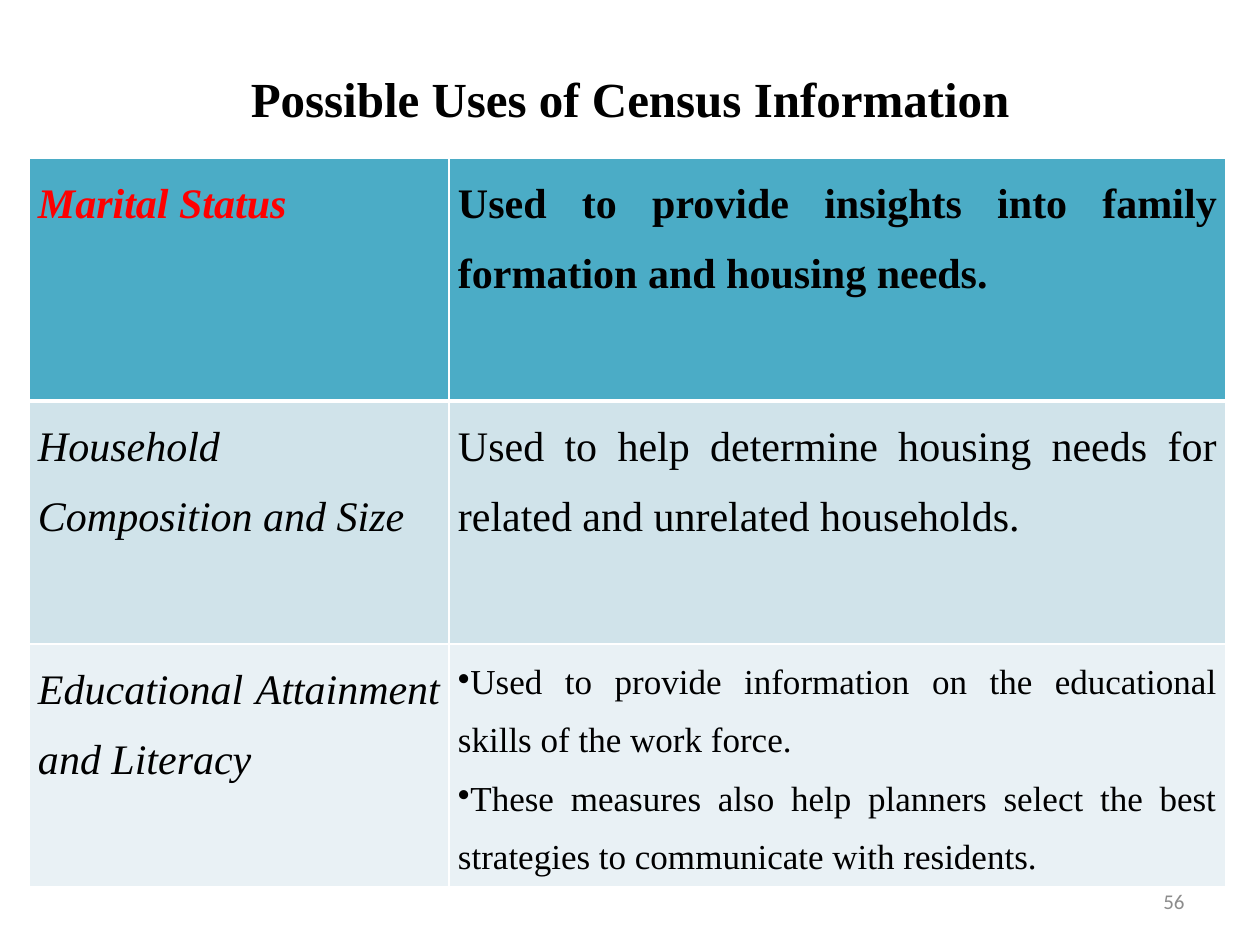
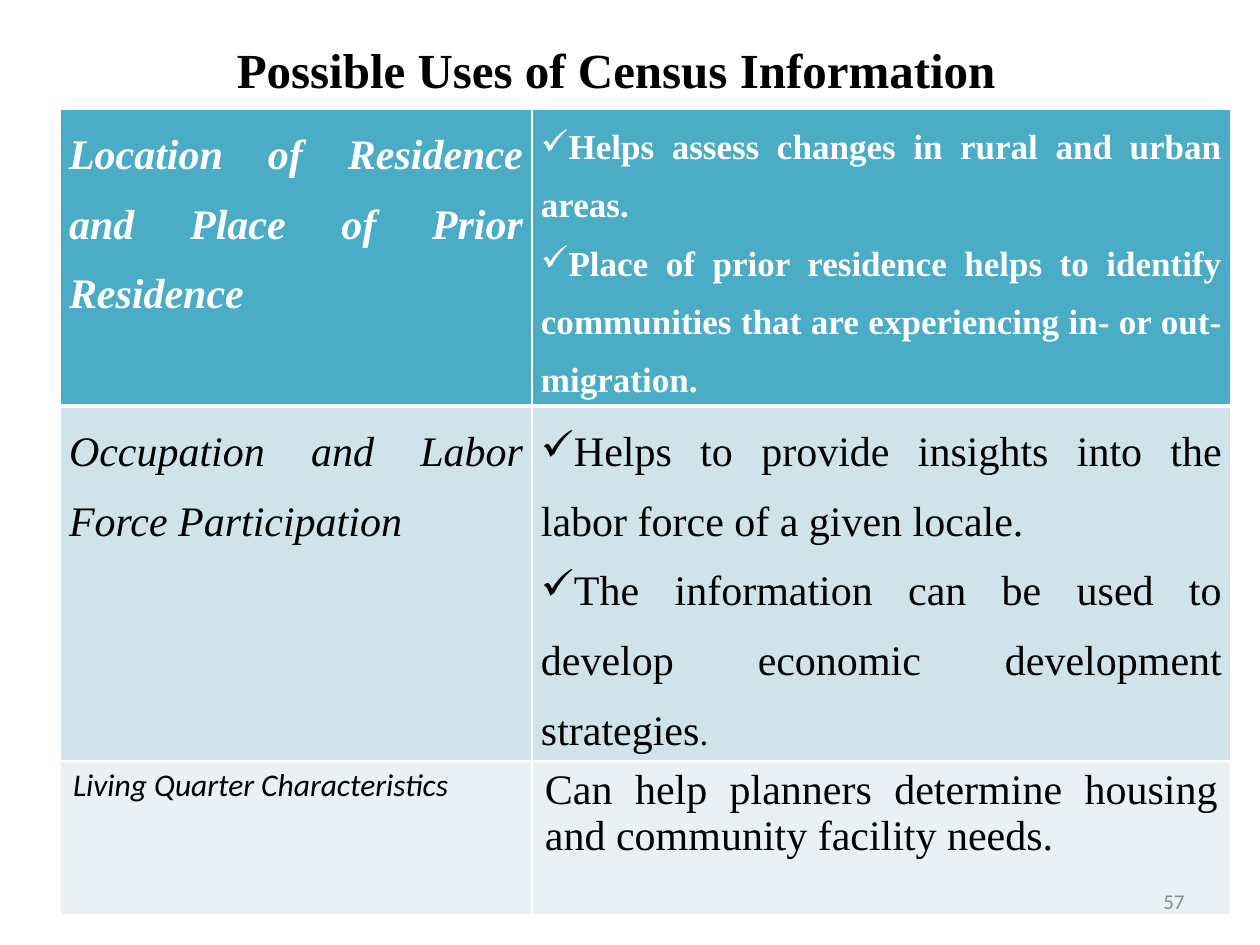
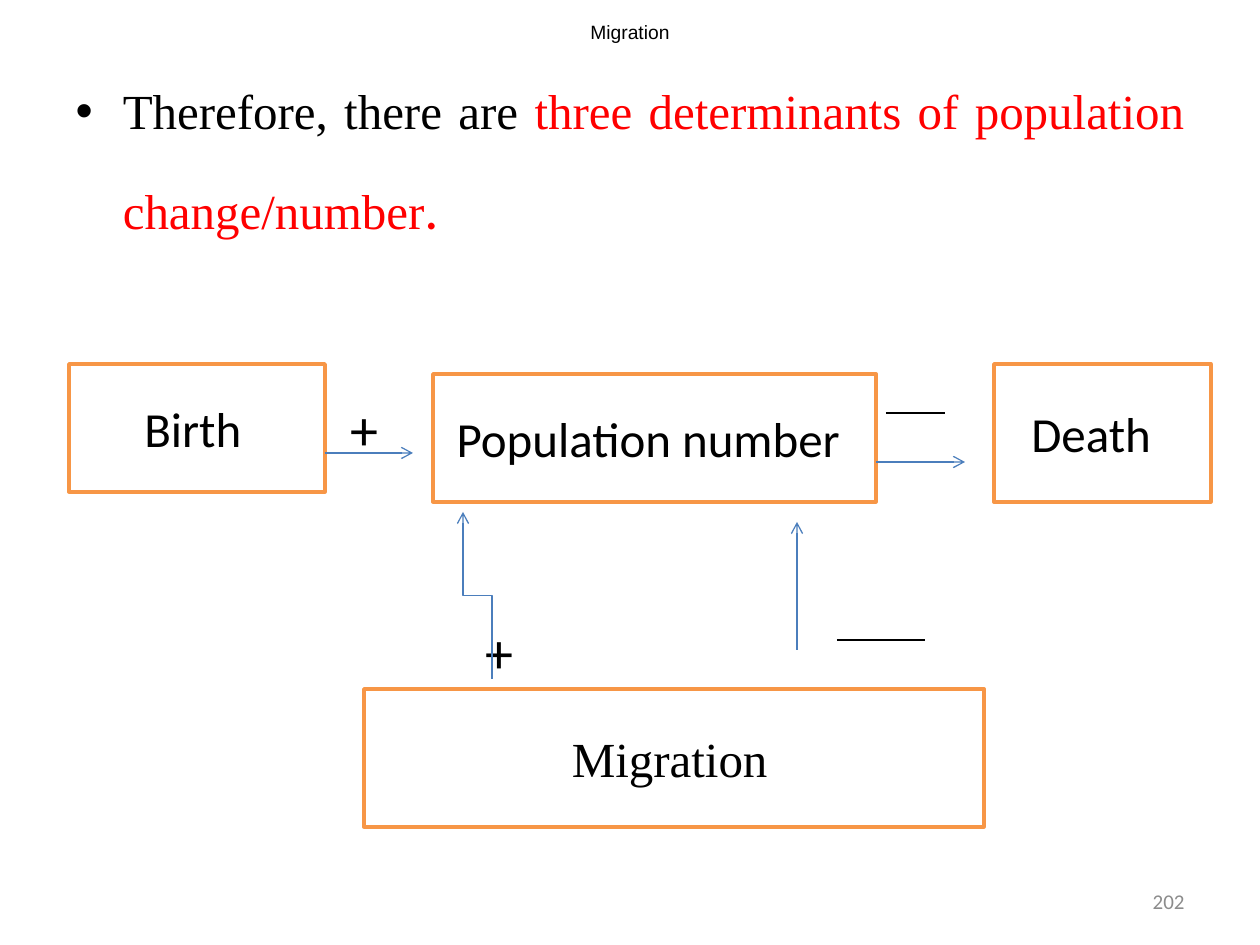
"""Build three slides on census information and the determinants of population change."""
from lxml.etree import SubElement
from pptx import Presentation
from pptx.dml.color import RGBColor
from pptx.enum.shapes import MSO_CONNECTOR as LINK, MSO_SHAPE as SHAPE
from pptx.enum.text import MSO_ANCHOR as ANCHOR, PP_ALIGN as ALIGN
from pptx.oxml.ns import qn
from pptx.util import Emu, Pt

SERIF, SANS, ARIAL = "Times New Roman", "Calibri", "Arial"
BLACK, WHITE, RED, GREY = "000000", "FFFFFF", "FF0000", "8C8C8C"
ORANGE, BLUE = "F79646", "4B7EBC"
ROW_FILLS = ["4BACC6", "D0E3EA", "E9F1F5"]

HEADING = {"name": SERIF, "size": 28, "bold": True, "color": BLACK}
TOPIC = {"name": ARIAL, "size": 11, "bold": False, "color": BLACK}
NUMBER = {"name": SANS, "size": 12, "color": GREY}
LABEL = {"name": SERIF, "size": 24, "italic": True, "bold": False, "color": BLACK}
USE = {**LABEL, "italic": False}
BOX_TEXT = {"name": SANS, "size": 28, "color": BLACK}
SIGN = {"name": SANS, "size": 32, "color": BLACK}

LOOSE = {"alignment": ALIGN.JUSTIFY, "line_spacing": 1.5}
TIGHT = {"alignment": ALIGN.JUSTIFY}
LEFT = {"alignment": ALIGN.LEFT}
CENTER = {"alignment": ALIGN.CENTER}
RIGHT = {"alignment": ALIGN.RIGHT}
NARROW, ROOMY = (9, 0), (13, 6)


def cell_of(paras, font, layout=LOOSE, bullet=None, margins=NARROW):
    """Describe the content of one table cell."""
    return {"paras": paras, "font": font, "layout": layout, "bullet": bullet, "margins": margins}


TABLE_PAGES = [
    {
        "title": "Possible Uses of Census Information", "title_at": (63, 38, 1134, 120),
        "corner": (29, 158), "columns": [420, 777], "rows": [243, 243, 243], "number": "56",
        "cells": [
            [cell_of(["Marital Status"], {**LABEL, "bold": True, "color": RED}),
             cell_of(["Used to provide insights into family formation and housing needs."],
                     {**USE, "bold": True})],
            [cell_of(["Household Composition and Size"], LABEL),
             cell_of(["Used to help determine housing needs for related and unrelated households."],
                     USE)],
            [cell_of(["Educational Attainment and Literacy"], LABEL),
             cell_of(["Used to provide information on the educational skills of the work force.",
                      "These measures also help planners select the best strategies to "
                      "communicate with residents."], {**USE, "size": 20}, bullet="•")],
        ],
    },
    {
        "title": "Possible Uses of Census Information", "title_at": (49, 0, 1134, 137),
        "corner": (60, 109), "columns": [472, 699], "rows": [297, 355, 154], "number": "57",
        "cells": [
            [cell_of(["Location of Residence and Place of Prior Residence"],
                     {**LABEL, "bold": True, "color": WHITE}),
             cell_of(["Helps assess changes in rural and urban areas.",
                      "Place of prior residence helps to identify communities that are "
                      "experiencing in- or out-migration."],
                     {**USE, "size": 20, "bold": True, "color": WHITE}, bullet="✓")],
            [cell_of(["Occupation and Labor Force Participation"], LABEL),
             cell_of(["Helps to provide insights into the labor force of a given locale.",
                      [("The information can be used to develop economic development strategies", {}),
                       (".", {"size": 20})]], USE, bullet="✓")],
            [cell_of(["Living Quarter Characteristics"], {**LABEL, "name": SANS, "size": 18},
                     LEFT, margins=ROOMY),
             cell_of(["Can help planners determine housing and community facility needs."],
                     USE, TIGHT, margins=ROOMY)],
        ],
    },
]

STATEMENT = [[("Therefore, there are ", {}),
              ("three determinants of population change/number", {"color": RED}),
              (".", {"name": SANS, "size": 32, "color": RED})]]
FACTORS = [
    ("Birth", (69, 364, 256, 128), SANS, 8),
    ("Population number", (433, 374, 443, 128), SANS, 12),
    ("Death", (994, 364, 217, 138), SANS, 22),
    ("Migration", (364, 689, 620, 138), SERIF, 8),
]
PLUS_CENTERS = [(364, 428), (499, 651)]
ARROWS = [((325, 453), (413, 453)), ((876, 462), (965, 462)), ((797, 650), (797, 522))]
BENT_ARROW = ((492, 679), (463, 512))
MINUS_SIGNS = [((886, 413), (945, 413)), ((837, 640), (925, 640))]


def px(length):
    """Turn pixels into EMU."""
    return Emu(round(length * 914400 / 126))


def rgb(value):
    """Turn a hex string into a colour."""
    return RGBColor.from_string(value)


def place(shape, at):
    """Set the position and size of a shape."""
    for name, length in zip(("left", "top", "width", "height"), at):
        setattr(shape, name, px(length))


def write(frame, paras, font, layout, bullet=None):
    """Fill a text frame with paragraphs made of strings or of spans."""
    frame.word_wrap = True
    for index, spans in enumerate(paras):
        para = frame.add_paragraph() if index else frame.paragraphs[0]
        if bullet:
            SubElement(para._p.get_or_add_pPr(), qn("a:buChar"), char=bullet)
        for name, value in layout.items():
            setattr(para, name, value)
        for text, change in [(spans, {})] if isinstance(spans, str) else spans:
            span = para.add_run()
            span.text = text
            look = {**font, **change}
            span.font.color.rgb = rgb(look.pop("color"))
            look["size"] = Pt(look["size"])
            for name, value in look.items():
                setattr(span.font, name, value)


def add_text(page, at, text, font, layout):
    """Add a one-line text box centred vertically."""
    box = page.shapes.add_textbox(*map(px, at))
    frame = box.text_frame
    frame.vertical_anchor = ANCHOR.MIDDLE
    write(frame, [text], font, layout)
    return frame


def add_page(deck, layout, title, at, font, number):
    """Add a slide with its title and slide number."""
    page = deck.slides.add_slide(deck.slide_layouts.get_by_name(layout))
    place(page.shapes.title, at)
    write(page.shapes.title.text_frame, [title], font, CENTER)
    add_text(page, (903, 876, 294, 50), number, NUMBER, RIGHT)
    return page


def add_borders(cell, row):
    """Draw white cell borders, thick between the header and the body."""
    widths = {"L": 1, "R": 1, "T": 3 if row == 1 else 1, "B": 3 if row == 0 else 1}
    for side, width in widths.items():
        line = SubElement(cell._tc.get_or_add_tcPr(), qn(f"a:ln{side}"), w=str(Pt(width)))
        SubElement(SubElement(line, qn("a:solidFill")), qn("a:srgbClr"), val=WHITE)


def add_uses_table(page, content):
    """Add the table of census topics and their uses."""
    columns, rows = content["columns"], content["rows"]
    at = (*content["corner"], sum(columns), sum(rows))
    table = page.shapes.add_table(len(rows), len(columns), *map(px, at)).table
    for column, width in zip(table.columns, columns):
        column.width = px(width)
    for index, (height, parts) in enumerate(zip(rows, content["cells"])):
        table.rows[index].height = px(height)
        for cell, part in zip(table.rows[index].cells, parts):
            add_borders(cell, index)
            cell.fill.solid()
            cell.fill.fore_color.rgb = rgb(ROW_FILLS[index])
            side, edge = map(px, part["margins"])
            cell.margin_left = cell.margin_right = side
            cell.margin_top = cell.margin_bottom = edge
            write(cell.text_frame, part["paras"], part["font"], part["layout"], part["bullet"])


def add_factor(page, text, at, face, shift):
    """Add an outlined box for one part of the population model."""
    box = page.shapes.add_shape(SHAPE.RECTANGLE, *map(px, at))
    box.shadow.inherit = False
    box.fill.solid()
    box.fill.fore_color.rgb = rgb(WHITE)
    box.line.color.rgb = rgb(ORANGE)
    box.line.width = Pt(2)
    frame = box.text_frame
    frame.vertical_anchor = ANCHOR.MIDDLE
    frame.margin_right = px(13 + shift)
    write(frame, [text], {**BOX_TEXT, "name": face}, CENTER)


def add_line(page, start, end, color, arrow=False, kind=LINK.STRAIGHT):
    """Add a thin connector, with an arrowhead at its end if asked."""
    line = page.shapes.add_connector(kind, *map(px, (*start, *end)))
    line.line.color.rgb = rgb(color)
    line.line.width = Pt(0.75)
    props = line._element.spPr
    if arrow:
        SubElement(props.find(qn("a:ln")), qn("a:tailEnd"), type="arrow")
    SubElement(props, qn("a:effectLst"))
    return line


def add_upward_elbow(page, start, end, color):
    """Add an elbow arrow that leaves and arrives vertically."""
    (x1, y1), (x2, y2) = start, end
    middle_x, middle_y = (x1 + x2) / 2, (y1 + y2) / 2
    run, rise = (y1 - y2) / 2, (x1 - x2) / 2
    line = add_line(page, (middle_x - run, middle_y + rise), (middle_x + run, middle_y - rise),
                    color, True, LINK.ELBOW)
    line.rotation = 270
    line._element.spPr.find(qn("a:xfrm")).set("rot", str(270 * 60000))


def add_population_page(deck):
    """Add the slide with the three determinants of population change."""
    page = add_page(deck, "Title and Content", "Migration", (0, 0, 1260, 63), TOPIC, "202")
    body = page.placeholders[1]
    place(body, (63, 45, 1134, 799))
    write(body.text_frame, STATEMENT, {**BOX_TEXT, "name": SERIF}, {**LOOSE, "space_before": Pt(0)})
    for factor in FACTORS:
        add_factor(page, *factor)
    for x, y in PLUS_CENTERS:
        add_text(page, (x - 40, y - 40, 80, 80), "+", SIGN, CENTER)
    for start, end in ARROWS:
        add_line(page, start, end, BLUE, True)
    add_upward_elbow(page, *BENT_ARROW, BLUE)
    for start, end in MINUS_SIGNS:
        add_line(page, start, end, BLACK)


def main():
    """Build and save the deck."""
    deck = Presentation()
    deck.slide_width, deck.slide_height = px(1260), px(945)
    for content in TABLE_PAGES:
        page = add_page(deck, "Title Only", content["title"], content["title_at"], HEADING,
                        content["number"])
        add_uses_table(page, content)
        page.shapes._spTree.append(page.shapes[1]._element)
    add_population_page(deck)
    deck.save("out.pptx")


if __name__ == "__main__":
    main()
